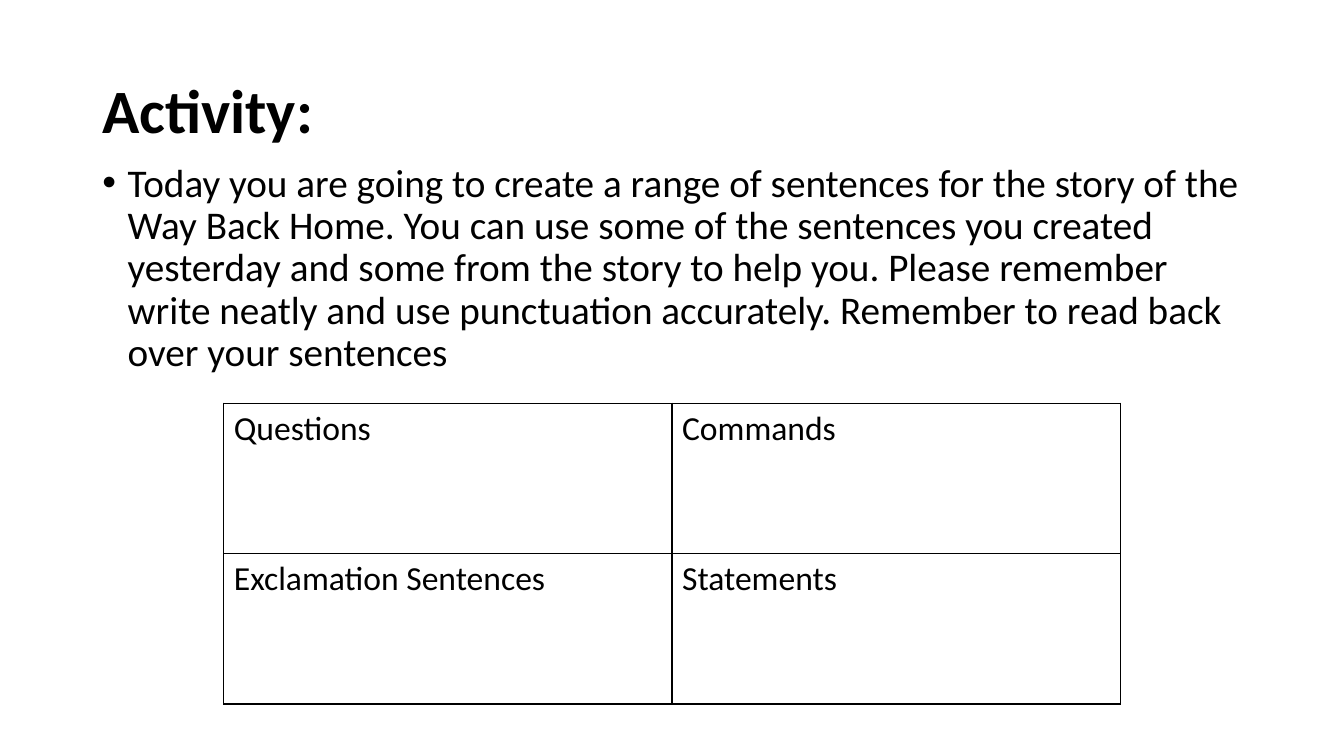
import dataclasses

import pptx
import pptx.dml.color
import pptx.enum.text
import pptx.oxml
import pptx.oxml.ns
import pptx.util

Cm = pptx.util.Cm
Pt = pptx.util.Pt


@dataclasses.dataclass(frozen=True)
class Theme:
    font: str = "Calibri"
    ink: str = "000000"
    paper: str = "FFFFFF"
    title: int = 44
    body: int = 28
    cell: int = 24
    rule: int = 1


THEME = Theme()

TASK = (
    "Today you are going to create a range of sentences for the story of the "
    "Way Back Home. You can use some of the sentences you created yesterday "
    "and some from the story to help you. Please remember write neatly and use "
    "punctuation accurately. Remember to read back over your sentences"
)
KINDS = [["Questions", "Commands"], ["Exclamation Sentences", "Statements"]]


def color(code):
    return pptx.dml.color.RGBColor.from_string(code)


def style(para, size, bold=False):
    para.font.name = THEME.font
    para.font.size = Pt(size)
    para.font.bold = bold
    para.font.color.rgb = color(THEME.ink)


def add_text(slide, box, text, size, bold=False):
    frame = slide.shapes.add_textbox(*map(Cm, box)).text_frame
    frame.word_wrap = True
    para = frame.paragraphs[0]
    para.text = text
    para.line_spacing = 0.9
    style(para, size, bold)
    return frame


def add_title(slide, box, text):
    frame = add_text(slide, box, text, THEME.title, True)
    frame.vertical_anchor = pptx.enum.text.MSO_ANCHOR.MIDDLE


def add_task(slide, box, text):
    para = add_text(slide, box, text, THEME.body).paragraphs[0]
    para.space_before = Pt(10)
    props = para._p.get_or_add_pPr()
    indent = Cm(0.64)
    props.set("marL", str(indent))
    props.set("indent", str(-indent))
    space = pptx.oxml.ns.nsdecls("a")
    for mark in (f'<a:buFont {space} typeface="Arial"/>', f'<a:buChar {space} char="•"/>'):
        props.append(pptx.oxml.parse_xml(mark))


def add_edges(cell):
    props = cell._tc.get_or_add_tcPr()
    space = pptx.oxml.ns.nsdecls("a")
    for spot, side in enumerate(("lnL", "lnR", "lnT", "lnB")):
        edge = pptx.oxml.parse_xml(
            f'<a:{side} {space} w="{Pt(THEME.rule)}"><a:solidFill>'
            f'<a:srgbClr val="{THEME.ink}"/></a:solidFill></a:{side}>'
        )
        props.insert(spot, edge)


def add_grid(slide, box, rows):
    shape = slide.shapes.add_table(len(rows), len(rows[0]), *map(Cm, box))
    table = shape.table
    table.first_row = False
    table.horz_banding = False
    for r, row in enumerate(rows):
        for c, text in enumerate(row):
            cell = table.cell(r, c)
            cell.text = text
            style(cell.text_frame.paragraphs[0], THEME.cell)
            cell.fill.solid()
            cell.fill.fore_color.rgb = color(THEME.paper)
            add_edges(cell)


def add_slide(deck, box):
    slide = deck.slides.add_slide(deck.slide_layouts[6])
    left, top, width, height = box
    add_title(slide, (left, top, width, 3.68), "Activity:")
    add_task(slide, (left, top + 2.97, width, height - 2.97), TASK)
    inset = 3.31
    add_grid(slide, (left + inset, top + 9.14, width - 2 * inset, 7.58), KINDS)


def main():
    deck = pptx.Presentation()
    deck.slide_width = Cm(33.87)
    deck.slide_height = Cm(19.05)
    add_slide(deck, (2.33, 1.02, 29.21, 17.25))
    deck.save("out.pptx")


if __name__ == "__main__":
    main()
